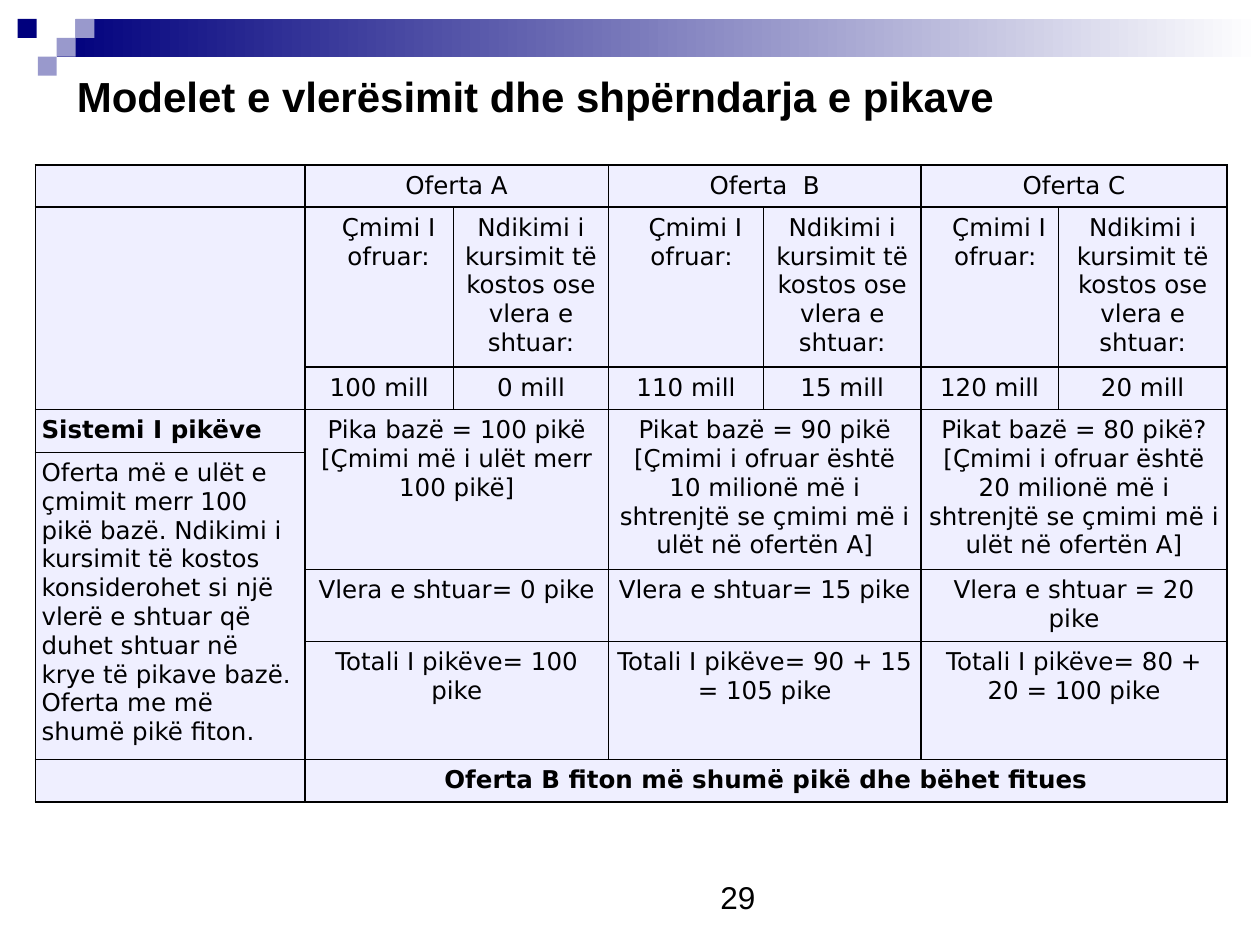
from pptx import Presentation
from pptx.dml.color import RGBColor
from pptx.enum.shapes import MSO_SHAPE
from pptx.enum.text import MSO_ANCHOR, PP_ALIGN
from pptx.oxml import parse_xml
from pptx.oxml.ns import nsdecls
from pptx.util import Inches, Pt


def color(value):
    return RGBColor.from_string(value)


def add_run(paragraph, text, size, font, bold=False):
    run = paragraph.add_run()
    run.text = text
    run.font.size = Pt(size)
    run.font.name = font
    run.font.bold = bold
    run.font.color.rgb = color("000000")


presentation = Presentation()
presentation.slide_width = Inches(10)
presentation.slide_height = Inches(7.5)
slide = presentation.slides.add_slide(presentation.slide_layouts[5])

bar = slide.shapes.add_shape(MSO_SHAPE.RECTANGLE, Inches(0.45), Inches(0.15), Inches(9.55), Inches(0.3))
bar.shadow.inherit = False
bar.line.fill.background()
bar.fill.gradient()
bar.fill.gradient_angle = 0
for stop, value in zip(bar.fill.gradient_stops, ("00007D", "FFFFFF")):
    stop.color.rgb = color(value)

squares = [(0.45, 0.15, "FFFFFF"), (0.6, 0.15, "9999CC"), (0.14, 0.15, "00007D"),
           (0.45, 0.3, "9999CC"), (0.3, 0.45, "9999CC")]
for left, top, value in squares:
    square = slide.shapes.add_shape(MSO_SHAPE.RECTANGLE, Inches(left), Inches(top), Inches(0.15), Inches(0.15))
    square.shadow.inherit = False
    square.line.fill.background()
    square.fill.solid()
    square.fill.fore_color.rgb = color(value)

title = slide.shapes.title
title.left, title.top, title.width, title.height = Inches(0.51), Inches(0.51), Inches(7.55), Inches(0.5)
title.text_frame.word_wrap = False
title.text_frame.vertical_anchor = MSO_ANCHOR.TOP
paragraph = title.text_frame.paragraphs[0]
paragraph.alignment = PP_ALIGN.LEFT
add_run(paragraph, "Modelet e vlerësimit dhe shpërndarja e pikave", 24, "Arial", True)

page_number = slide.shapes.add_textbox(Inches(5.62), Inches(6.92), Inches(0.64), Inches(0.4))
page_number.text_frame.word_wrap = True
add_run(page_number.text_frame.paragraphs[0], "29", 18, "Arial")

column_widths = [2.14, 1.18, 1.23, 1.23, 1.25, 1.09, 1.34]
row_heights = [0.33, 1.26, 0.34, 0.34, 0.93, 0.57, 0.93, 0.34]
price = "Çmimi I ofruar:"
impact = "Ndikimi i kursimit të kostos ose vlera e shtuar:"
system = ("Oferta më e ulët e çmimit merr 100 pikë bazë. Ndikimi i kursimit të kostos "
          "konsiderohet si një vlerë e shtuar që duhet shtuar në krye të pikave bazë.\n"
          "Oferta me më shumë pikë fiton.")
base_b = "Pikat bazë = 90 pikë [Çmimi i ofruar është 10 milionë më i shtrenjtë se çmimi më i ulët në ofertën A]"
base_c = "Pikat bazë = 80 pikë? [Çmimi i ofruar është 20 milionë më i shtrenjtë se çmimi më i ulët në ofertën A]"
rows = [
    ["", "Oferta A", "", "Oferta  B", "", "Oferta C", ""],
    ["", price, impact, price + " ", impact, price + " ", impact],
    ["", "100 mill", "0 mill", "110 mill", "15 mill", "120 mill", "20 mill"],
    ["Sistemi I pikëve", "Pika bazë = 100 pikë [Çmimi më i ulët merr 100 pikë]", "", base_b, "", base_c, ""],
    [system, "", "", "", "", "", ""],
    ["", "Vlera e shtuar= 0 pike", "", "Vlera e shtuar= 15 pike", "", "Vlera e shtuar = 20 pike", ""],
    ["", "Totali I pikëve= 100 pike", "", "Totali I pikëve= 90 + 15 = 105 pike", "",
     "Totali I pikëve= 80 + 20 = 100 pike", ""],
    ["", "Oferta B fiton më shumë pikë dhe bëhet fitues", "", "", "", "", ""],
]
bold_texts = {"Sistemi I pikëve", "Oferta B fiton më shumë pikë dhe bëhet fitues"}

table = slide.shapes.add_table(len(rows), len(column_widths), Inches(0.28), Inches(1.31),
                               Inches(sum(column_widths)), Inches(sum(row_heights))).table
table.first_row = False
table.horz_banding = False
for column, width in zip(table.columns, column_widths):
    column.width = Inches(width)
for row, height in zip(table.rows, row_heights):
    row.height = Inches(height)

for row_index, texts in enumerate(rows):
    for column_index, text in enumerate(texts):
        cell = table.cell(row_index, column_index)
        cell.margin_left = cell.margin_right = Inches(0.05)
        cell.margin_top = cell.margin_bottom = Inches(0.05)
        properties = cell._tc.get_or_add_tcPr()
        for side in ("lnL", "lnR", "lnT", "lnB"):
            properties.append(parse_xml(
                f'<a:{side} {nsdecls("a")} w="12700"><a:solidFill><a:srgbClr val="000000"/>'
                f'</a:solidFill></a:{side}>'))
        cell.fill.solid()
        cell.fill.fore_color.rgb = color("EFEFFF")
        for index, line in enumerate(text.split("\n")):
            paragraph = cell.text_frame.paragraphs[0] if index == 0 else cell.text_frame.add_paragraph()
            paragraph.alignment = PP_ALIGN.CENTER if column_index else PP_ALIGN.LEFT
            if text.startswith(price):
                paragraph._p.get_or_add_pPr().set("marL", str(Inches(0.15)))
            if line:
                add_run(paragraph, line, 14, "DejaVu Sans", text in bold_texts)
            else:
                paragraph._p.append(parse_xml(f'<a:endParaRPr {nsdecls("a")} sz="1400"/>'))

for row_index in (0, 5, 6):
    for column_index in (1, 3, 5):
        table.cell(row_index, column_index).merge(table.cell(row_index, column_index + 1))
for column_index in (1, 3, 5):
    table.cell(3, column_index).merge(table.cell(4, column_index + 1))
table.cell(1, 0).merge(table.cell(2, 0))
table.cell(4, 0).merge(table.cell(6, 0))
table.cell(7, 1).merge(table.cell(7, 6))

presentation.save("out.pptx")
